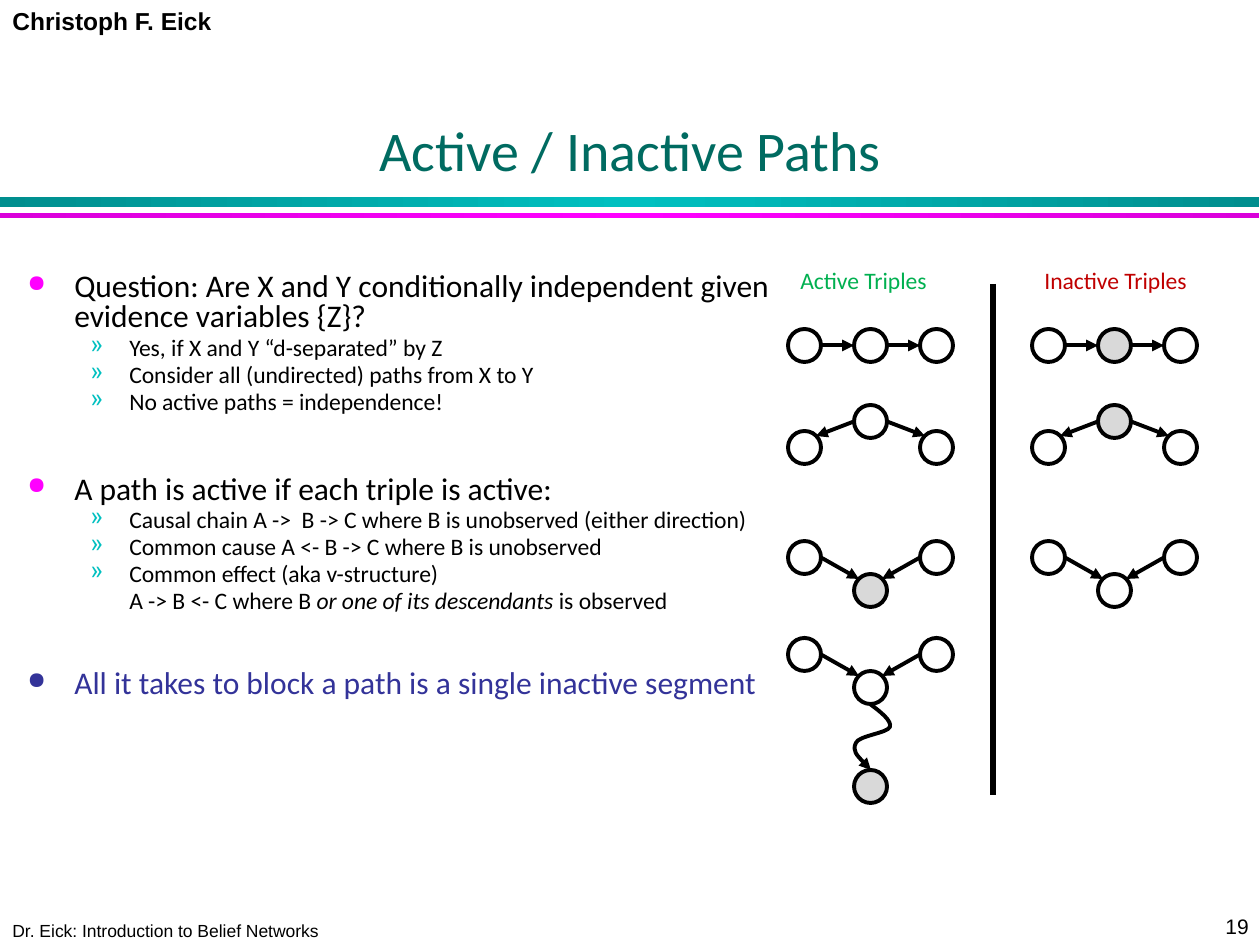
import copy

import pptx
import pptx.dml.color
import pptx.enum.shapes
import pptx.enum.text
import pptx.oxml
import pptx.oxml.ns
import pptx.util

RGB = pptx.dml.color.RGBColor
SHAPE = pptx.enum.shapes.MSO_SHAPE
ALIGN = pptx.enum.text.PP_ALIGN
qn = pptx.oxml.ns.qn
Pt = pptx.util.Pt

PX = 914400 / 126
BLACK = RGB(0x00, 0x00, 0x00)
WHITE = RGB(0xFF, 0xFF, 0xFF)
GRAY = RGB(0xD9, 0xD9, 0xD9)
DARK_TEAL = RGB(0x00, 0x8E, 0x8E)
TEAL = RGB(0x00, 0xC0, 0xC0)
DARK_MAGENTA = RGB(0xDA, 0x00, 0xDA)
MAGENTA = RGB(0xFF, 0x00, 0xFF)
TITLE = RGB(0x00, 0x6B, 0x61)
INDIGO = RGB(0x33, 0x33, 0x99)
GREEN = RGB(0x00, 0xB0, 0x50)
RED = RGB(0xC0, 0x00, 0x00)

NODE = 33
PITCH = 2 * NODE
WIDTH = 2 * PITCH + NODE
ACTIVE_X, INACTIVE_X = 788, 1032
CURVE = [(82, 66), (93, 74), (104, 83), (102, 89), (100, 95),
         (70, 98), (68, 105), (64, 113), (73, 122), (83, 132)]

TOPICS = [
    ("Question: Are X and Y conditionally independent given evidence variables {Z}?",
     BLACK, MAGENTA, 0,
     ["Yes, if X and Y “d-separated” by Z",
      "Consider all (undirected) paths from X to Y",
      "No active paths = independence!"]),
    ("A path is active if each triple is active:", BLACK, MAGENTA, 35,
     ["Causal chain A ->  B -> C where B is unobserved (either direction)",
      "Common cause A <- B -> C where B is unobserved",
      "Common effect (aka v-structure)",
      ["A -> B <- C where B ", "or one of its descendants", " is observed"]]),
    ("All it takes to block a path is a single inactive segment",
     INDIGO, INDIGO, 32, []),
]


def px(*values):
    """Turn px lengths into EMU."""
    return [round(v * PX) for v in values]


def apply(obj, values):
    """Set each attribute named in a dict of format values."""
    for name, value in values.items():
        setattr(obj, name, value)


def add_run(p, text, size, color, **extra):
    """Append a formatted run to a paragraph."""
    r = p.add_run()
    r.text = text
    apply(r.font, {"name": "Calibri", "size": Pt(size), **extra})
    r.font.color.rgb = color


def add_label(s, box, text, size, color, wrap=True, **extra):
    """Place a one-line text box."""
    tf = s.shapes.add_textbox(*px(*box)).text_frame
    tf.word_wrap = wrap
    add_run(tf.paragraphs[0], text, size, color, **extra)


def add_title(s, box, text):
    """Move and format the title placeholder."""
    sp = s.shapes.title
    apply(sp, dict(zip(("left", "top", "width", "height"), px(*box))))
    tf = sp.text_frame
    apply(tf, {"word_wrap": True, "auto_size": pptx.enum.text.MSO_AUTO_SIZE.NONE,
               "vertical_anchor": pptx.enum.text.MSO_ANCHOR.BOTTOM})
    p = tf.paragraphs[0]
    p.alignment = ALIGN.CENTER
    add_run(p, text, 32, TITLE)


def add_bar(g, box, edge, middle):
    """Draw a band that runs from the edge colour to the middle colour and back."""
    sp = g.shapes.add_shape(SHAPE.RECTANGLE, *px(*box))
    sp.shadow.inherit = False
    sp.line.fill.background()
    sp.fill.gradient()
    sp.fill.gradient_angle = 0
    stops = sp._element.spPr.find(qn("a:gradFill")).find(qn("a:gsLst"))
    stops.insert(1, copy.deepcopy(stops[0]))
    for stop, position, color in zip(sp.fill.gradient_stops, (0, 0.5, 1),
                                     (edge, middle, edge)):
        stop.position = position
        stop.color.rgb = color


def add_paragraph(tf, runs, size, color, before, margin, indent, bullet=None):
    """Add a body paragraph, with a bullet of (character, colour, percent) if given."""
    first = not tf.paragraphs[0].runs
    p = tf.paragraphs[0] if first else tf.add_paragraph()
    apply(p, {"line_spacing": 0.8, "space_before": Pt(before), "alignment": ALIGN.LEFT})
    pPr = p._p.get_or_add_pPr()
    for name, value in zip(("marL", "indent"), px(margin, indent)):
        pPr.set(name, str(value))
    if bullet:
        char, tint, percent = bullet
        clr = pptx.oxml.ns.nsdecls("a")
        for xml in (f'<a:buClr {clr}><a:srgbClr val="{tint}"/></a:buClr>',
                    f'<a:buSzPct {clr} val="{percent * 1000}"/>',
                    f'<a:buChar {clr} char="{char}"/>'):
            pPr.append(pptx.oxml.parse_xml(xml))
    for i, text in enumerate(runs):
        add_run(p, text, size, color, italic=i == 1)


def add_body(s, box):
    """Fill the left region with topics and their points."""
    tf = s.shapes.add_textbox(*px(*box)).text_frame
    tf.word_wrap = True
    for heading, color, tint, before, points in TOPICS:
        add_paragraph(tf, [heading], 18, color, before, 47, -47, ("●", tint, 75))
        for point in points:
            if isinstance(point, str):
                add_paragraph(tf, [point], 13.5, BLACK, 2.5, 102, -39, ("»", TEAL, 100))
            else:
                add_paragraph(tf, point, 13.5, BLACK, 2.5, 102, 0)


def finish_line(sp, width=2.25, arrow=True):
    """Make a line black and shadowless, with an arrowhead at its end if wanted."""
    sp.line.color.rgb = BLACK
    sp.line.width = Pt(width)
    if arrow:
        ln = sp.line._get_or_add_ln()
        ln.append(ln.makeelement(qn("a:tailEnd"), {"type": "triangle"}))
    spPr = sp._element.spPr
    if spPr.find(qn("a:effectLst")) is None:
        spPr.append(spPr.makeelement(qn("a:effectLst"), {}))


def add_line(shapes, start, end, **style):
    """Connect two points given in px."""
    kind = pptx.enum.shapes.MSO_CONNECTOR.STRAIGHT
    finish_line(shapes.add_connector(kind, *px(*start, *end)), **style)


def add_node(g, x, y, observed=False):
    """Draw a node, shaded when it is observed."""
    sp = g.shapes.add_shape(SHAPE.OVAL, *px(x, y, NODE, NODE))
    sp.shadow.inherit = False
    sp.fill.solid()
    sp.fill.fore_color.rgb = GRAY if observed else WHITE
    sp.line.color.rgb = BLACK
    sp.line.width = Pt(2.25)


def add_triple(s, x, y, kind, observed):
    """Draw three linked nodes whose outer nodes have their top left at x, y."""
    g = s.shapes.add_group_shape()
    drop = {"chain": 0, "cause": -26, "effect": NODE}[kind]
    add_node(g, x, y)
    add_node(g, x + PITCH, y + drop, observed)
    add_node(g, x + 2 * PITCH, y)
    half = NODE / 2
    if kind == "chain":
        for left in (x + NODE, x + PITCH + NODE):
            add_line(g.shapes, (left, y + half), (left + NODE, y + half))
        return g
    near, far = {"cause": ((PITCH, drop + half), (28, 5)),
                 "effect": ((NODE, half), (PITCH + 5, drop + 5))}[kind]
    for side in (lambda v: v, lambda v: WIDTH - v):
        add_line(g.shapes, *[(x + side(dx), y + dy) for dx, dy in (near, far)])
    return g


def add_descendant(g, x, y):
    """Draw the curved path from the middle node to its observed descendant."""
    add_node(g, x + PITCH, y + 4 * NODE, True)
    start, *rest = [(x + dx, y + dy) for dx, dy in CURVE]
    builder = g.shapes.build_freeform(*start, scale=PX)
    builder.add_line_segments(rest, close=False)
    sp = builder.convert_to_shape()
    sp.fill.background()
    finish_line(sp)
    outline = next(sp._element.iter(qn("a:path")))
    segments = outline.findall(qn("a:lnTo"))
    for i in range(0, len(segments), 3):
        curve = outline.makeelement(qn("a:cubicBezTo"), {})
        for segment in segments[i:i + 3]:
            curve.append(segment[0])
            outline.remove(segment)
        outline.append(curve)


def add_triples(s, x, title, color, width, active):
    """Draw one column of triples under its heading."""
    add_label(s, (x, 260, width, 42), title, 13.5, color)
    for y, kind in ((329, "chain"), (431, "cause"), (541, "effect")):
        add_triple(s, x, y, kind, (kind == "effect") == active)
    if active:
        add_descendant(add_triple(s, x, 638, "effect", False), x, 638)


def main():
    """Build the slide and save it."""
    prs = pptx.Presentation()
    prs.slide_width, prs.slide_height = px(1260, 945)
    s = prs.slides.add_slide(prs.slide_layouts[5])
    g = s.shapes.add_group_shape()
    add_bar(g, (0, 197, 1259, 10), DARK_TEAL, TEAL)
    add_bar(g, (0, 213, 1259, 5), DARK_MAGENTA, MAGENTA)
    add_label(s, (0, 0, 226, 42), "Christoph F. Eick", 14, BLACK, False,
              name="Arial", bold=True)
    add_label(s, (0, 914, 423, 34), "Dr. Eick: Introduction to Belief Networks", 10,
              BLACK, name="Arial")
    add_label(s, (1213, 907, 50, 38), "19", 12, BLACK, False, name="Arial")
    add_title(s, (95, 84, 1071, 105), "Active / Inactive Paths")
    add_body(s, (15, 267, 780, 519))
    add_triples(s, ACTIVE_X, "Active Triples", GREEN, 165, True)
    add_triples(s, INACTIVE_X, "Inactive Triples", RED, 181, False)
    add_line(s.shapes, (993, 284), (993, 795), width=3, arrow=False)
    prs.save("out.pptx")


if __name__ == "__main__":
    main()
